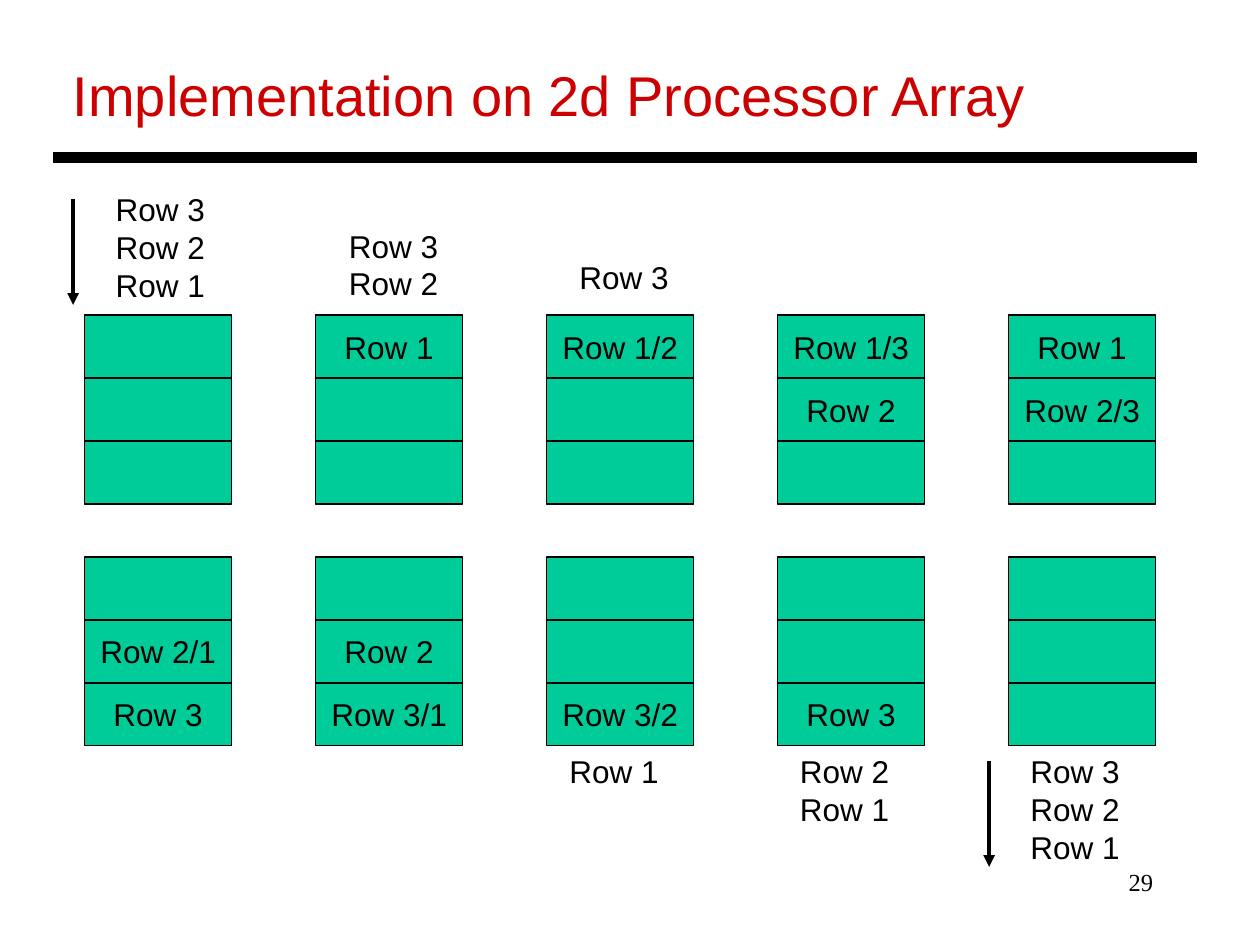
from lxml import etree
from pptx import Presentation
from pptx.dml.color import RGBColor
from pptx.enum.shapes import MSO_CONNECTOR, MSO_SHAPE
from pptx.enum.text import MSO_ANCHOR, MSO_AUTO_SIZE, PP_ALIGN
from pptx.oxml.ns import qn
from pptx.util import Inches, Pt

STRAIGHT = MSO_CONNECTOR.STRAIGHT
RECTANGLE = MSO_SHAPE.RECTANGLE
MIDDLE = MSO_ANCHOR.MIDDLE
FIT_SHAPE = MSO_AUTO_SIZE.SHAPE_TO_FIT_TEXT
LEFT, CENTER, RIGHT = PP_ALIGN.LEFT, PP_ALIGN.CENTER, PP_ALIGN.RIGHT

COLORS = {"title": "CC0000", "cell": "00CC99", "ink": "000000"}

COLUMN_LEFT = 0.67
COLUMN_PITCH = 11 / 6
CELL_WIDTH = 1.17
CELL_HEIGHT = 0.5
LABEL_WIDTH = 0.91
LINE_HEIGHT = 0.3
LABEL_PADDING = 0.1

BANDS = [
    (2.5, [
        ["", "", ""],
        ["Row 1", "", ""],
        ["Row 1/2", "", ""],
        ["Row 1/3", "Row 2", ""],
        ["Row 1", "Row 2/3", ""],
    ]),
    (4.42, [
        ["", "Row 2/1", "Row 3"],
        ["", "Row 2", "Row 3/1"],
        ["", "", "Row 3/2"],
        ["", "", "Row 3"],
        ["", "", ""],
    ]),
]
QUEUES = [
    (0.82, 1.46, ["Row 3", "Row 2", "Row 1"]),
    (2.67, 1.75, ["Row 3", "Row 2"]),
    (4.5, 2, ["Row 3"]),
    (4.42, 5.92, ["Row 1"]),
    (6.25, 5.92, ["Row 2", "Row 1"]),
    (8.08, 5.92, ["Row 3", "Row 2", "Row 1"]),
]
ARROWS = [(0.58, 1.58, 2.42), (7.85, 6.04, 6.88)]


def color(name):
    return RGBColor.from_string(COLORS[name])


def write_text(frame, lines, size=18, font="Arial", ink="ink", align=LEFT):
    for index, line in enumerate(lines):
        para = frame.paragraphs[0] if index == 0 else frame.add_paragraph()
        para.alignment = align
        span = para.add_run()
        span.text = line
        span.font.size = Pt(size)
        span.font.name = font
        span.font.color.rgb = color(ink)


def add_text(page, left, top, width, height, lines, fit=True, **style):
    box = page.shapes.add_textbox(
        Inches(left), Inches(top), Inches(width), Inches(height))
    frame = box.text_frame
    frame.word_wrap = not fit
    if fit:
        frame.auto_size = FIT_SHAPE
    write_text(frame, lines, **style)


def add_cell(page, left, top, text):
    cell = page.shapes.add_shape(
        RECTANGLE, Inches(left), Inches(top), Inches(CELL_WIDTH), Inches(CELL_HEIGHT))
    cell.shadow.inherit = False
    cell.fill.solid()
    cell.fill.fore_color.rgb = color("cell")
    cell.line.color.rgb = color("ink")
    cell.line.width = Pt(0.75)
    if text:
        cell.text_frame.word_wrap = False
        cell.text_frame.vertical_anchor = MIDDLE
        write_text(cell.text_frame, [text], align=CENTER)


def add_line(page, start, end, width, arrow=False):
    line = page.shapes.add_connector(
        STRAIGHT, *(Inches(value) for value in (*start, *end)))
    line.line.color.rgb = color("ink")
    line.line.width = Pt(width)
    if arrow:
        etree.SubElement(line.line._get_or_add_ln(), qn("a:tailEnd"), type="triangle")
    etree.SubElement(line._element.spPr, qn("a:effectLst"))


def add_band(page, top, columns):
    for column, cells in enumerate(columns):
        for row, text in enumerate(cells):
            add_cell(page, COLUMN_LEFT + column * COLUMN_PITCH,
                     top + row * CELL_HEIGHT, text)


def main():
    deck = Presentation()
    deck.slide_width, deck.slide_height = Inches(10), Inches(7.5)
    page = deck.slides.add_slide(deck.slide_layouts[6])

    add_text(page, 7.17, 6.83, 2.08, 0.5, ["29"], fit=False,
             size=14, font="Times New Roman", align=RIGHT)
    add_text(page, 0.48, 0.43, 7.77, 0.63,
             ["Implementation on 2d Processor Array"], size=32, ink="title")
    add_line(page, (0.42, 1.25), (9.5, 1.25), 6)
    for top, columns in BANDS:
        add_band(page, top, columns)
    for left, top, lines in QUEUES:
        height = LABEL_PADDING + LINE_HEIGHT * len(lines)
        add_text(page, left, top, LABEL_WIDTH, height, lines)
    for x, top, bottom in ARROWS:
        add_line(page, (x, top), (x, bottom), 2.25, arrow=True)

    deck.save("out.pptx")


if __name__ == "__main__":
    main()
